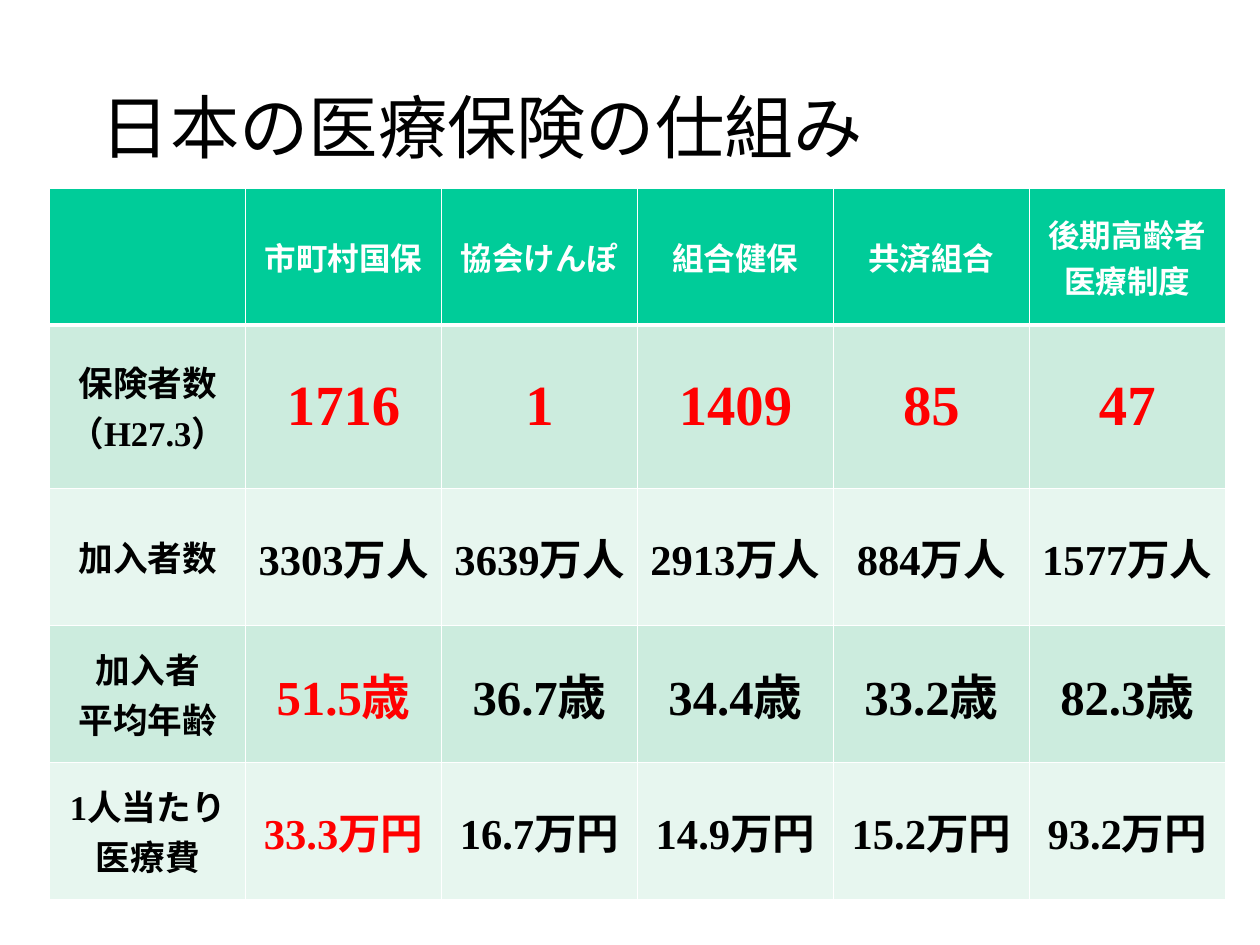
"""Build a slide with a table comparing Japan's health insurance schemes."""
from lxml import etree
from pptx import Presentation
from pptx.dml.color import RGBColor
from pptx.enum.text import MSO_ANCHOR, PP_ALIGN
from pptx.oxml.ns import qn
from pptx.util import Pt

MID = MSO_ANCHOR.MIDDLE
LEFT, CENTER = PP_ALIGN.LEFT, PP_ALIGN.CENTER
SANS, SERIF = "Noto Sans CJK JP", "Times New Roman"
HUES = {"head": "00CC99", "dark": "CCECDE", "light": "E7F6EF",
        "white": "FFFFFF", "black": "000000", "red": "FF0000"}


def style(frame, face, size, hue, bold, align):
    for para in frame.paragraphs:
        para.alignment = align
        for run in para.runs:
            look = {"name": face, "size": Pt(size), "bold": bold}
            for key, value in look.items():
                setattr(run.font, key, value)
            run.font.color.rgb = RGBColor.from_string(HUES[hue])
            etree.SubElement(run.font._element, qn("a:ea"), typeface=SANS)


def border(cell, widths):
    props = cell._tc.get_or_add_tcPr()
    for side, width in widths.items():
        line = etree.SubElement(props, qn("a:ln" + side), w=str(Pt(width)))
        fill = etree.SubElement(line, qn("a:solidFill"))
        etree.SubElement(fill, qn("a:srgbClr"), val=HUES["white"])


deck = Presentation()
deck.slide_width, deck.slide_height = Pt(800), Pt(600)
slide = deck.slides.add_slide(deck.slide_layouts[6])

title = slide.shapes.add_textbox(Pt(57), Pt(30), Pt(680), Pt(100)).text_frame
title.word_wrap = True
title.vertical_anchor = MID
title.text = "日本の医療保険の仕組み"
style(title, SANS, 44, "black", False, LEFT)

rows = [
    ("head", 87, 20, 20, ["", "市町村国保", "協会けんぽ", "組合健保",
                          "共済組合", "後期高齢者\v医療制度"]),
    ("dark", 103.5, 22, 36, ["保険者数\n（H27.3）", "1716", "1", "1409",
                             "85", "47"]),
    ("light", 87, 22, 27, ["加入者数", "3303万人", "3639万人", "2913万人",
                           "884万人", "1577万人"]),
    ("dark", 87, 22, 31, ["加入者\v平均年齢", "51.5歳", "36.7歳", "34.4歳",
                          "33.2歳", "82.3歳"]),
    ("light", 87, 22, 27, ["1人当たり医療費", "33.3万円", "16.7万円",
                           "14.9万円", "15.2万円", "93.2万円"]),
]
tall = sum(row[1] for row in rows)
reds = {(1, col) for col in range(1, 6)} | {(3, 1), (4, 1)}
pads = {"margin_left": Pt(7.9), "margin_right": Pt(7.9),
        "margin_top": Pt(4), "margin_bottom": Pt(4), "vertical_anchor": MID}

table = slide.shapes.add_table(5, 6, Pt(31.6), Pt(119.5), Pt(746.4), Pt(tall)).table
for col in table.columns:
    col.width = Pt(124.4)

for r, (band, height, first, rest, texts) in enumerate(rows):
    table.rows[r].height = Pt(height)
    for c, text in enumerate(texts):
        cell = table.cell(r, c)
        for key, value in pads.items():
            setattr(cell, key, value)
        border(cell, {"L": 1, "R": 1, "T": 3 if r == 1 else 1,
                      "B": 3 if r == 0 else 1})
        cell.fill.solid()
        cell.fill.fore_color.rgb = RGBColor.from_string(HUES[band])
        cell.text_frame.text = text
        hue = "white" if r == 0 else "red" if (r, c) in reds else "black"
        style(cell.text_frame, SERIF, rest if c else first, hue, True, CENTER)

deck.save("out.pptx")
